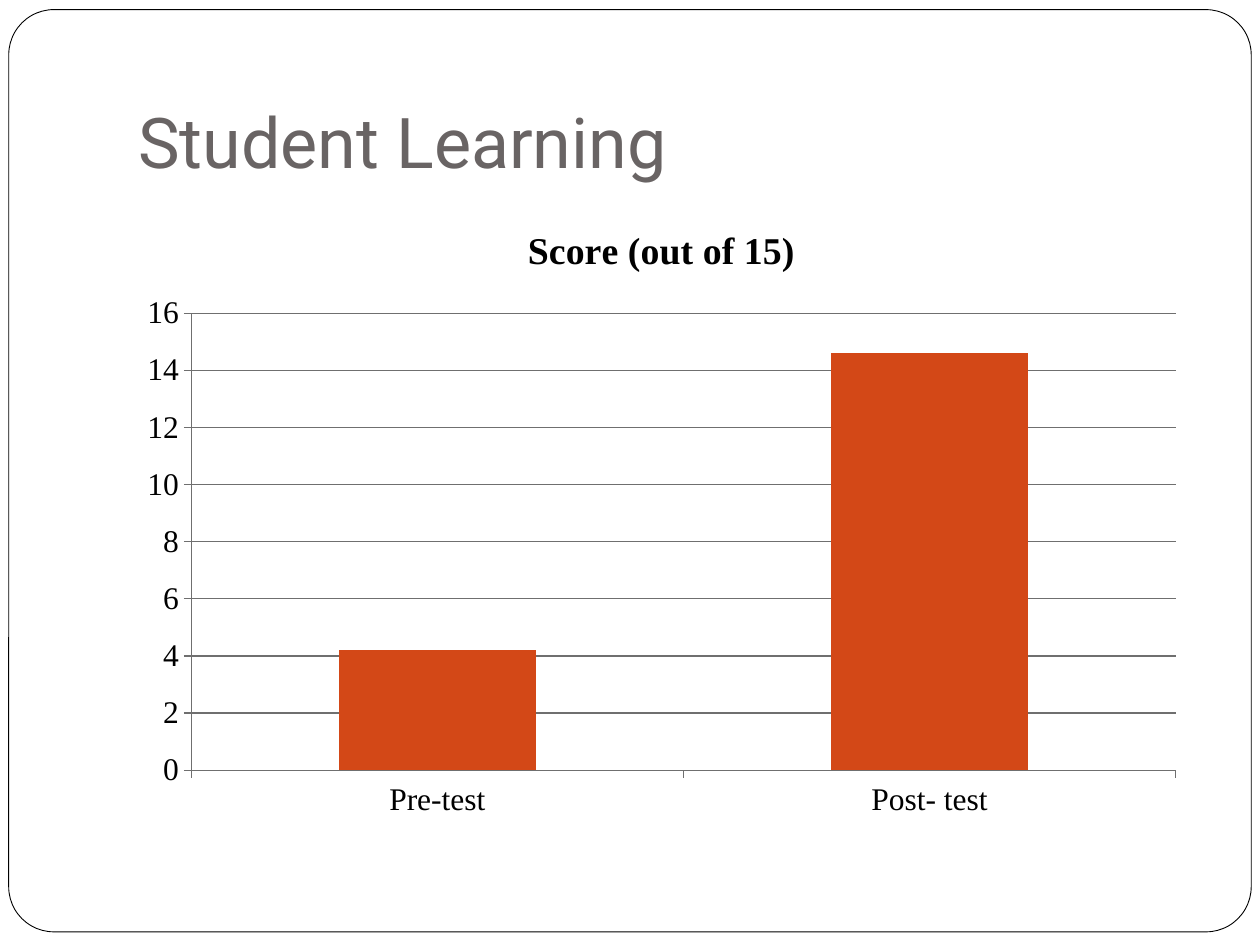
from dataclasses import dataclass

from pptx import Presentation
from pptx.chart.data import CategoryChartData
from pptx.dml.color import RGBColor
from pptx.enum.chart import XL_CHART_TYPE, XL_TICK_MARK
from pptx.enum.shapes import MSO_SHAPE
from pptx.enum.text import MSO_ANCHOR
from pptx.util import Pt

COLORS = {
    "paper": "FFFFFF",
    "ink": "000000",
    "title": "696464",
    "bar": "D34817",
    "axis": "6F6F6F",
}


@dataclass
class Box:
    left: float
    top: float
    width: float
    height: float

    def pts(self) -> tuple:
        return Pt(self.left), Pt(self.top), Pt(self.width), Pt(self.height)


@dataclass
class Score:
    test: str
    value: float


SCORES = [Score("Pre-test", 4.2), Score("Post- test", 14.6)]


def rgb(name: str) -> RGBColor:
    return RGBColor.from_string(COLORS[name])


def write(tf, text: str, *, size: float, font: str, color: str, bold: bool = False) -> None:
    r = tf.paragraphs[0].add_run()
    r.text = text
    r.font.size = Pt(size)
    r.font.name = font
    r.font.bold = bold
    r.font.color.rgb = rgb(color)


def add_frame(s, box: Box) -> None:
    sp = s.shapes.add_shape(MSO_SHAPE.ROUNDED_RECTANGLE, *box.pts())
    sp.adjustments[0] = 0.049
    sp.shadow.inherit = False
    sp.fill.solid()
    sp.fill.fore_color.rgb = rgb("paper")
    sp.line.color.rgb = rgb("ink")
    sp.line.width = Pt(0.5)


def add_title(s, box: Box, text: str) -> None:
    tf = s.shapes.add_textbox(*box.pts()).text_frame
    tf.word_wrap = True
    tf.vertical_anchor = MSO_ANCHOR.BOTTOM
    tf.margin_left = tf.margin_right = tf.margin_bottom = Pt(7.2)
    tf.margin_top = Pt(3.6)
    write(tf, text, size=40, font="Roboto", color="title")


def style_axis(axis) -> None:
    axis.major_tick_mark = XL_TICK_MARK.OUTSIDE
    axis.minor_tick_mark = XL_TICK_MARK.NONE
    axis.format.line.color.rgb = rgb("axis")
    axis.format.line.width = Pt(0.75)


def add_score_chart(s, box: Box, title: str, scores: list[Score]) -> None:
    data = CategoryChartData()
    data.categories = [score.test for score in scores]
    data.add_series(title, [score.value for score in scores])
    chart = s.shapes.add_chart(XL_CHART_TYPE.COLUMN_CLUSTERED, *box.pts(), data).chart
    chart.font.name = "Times New Roman"
    chart.font.size = Pt(18)
    chart.font.color.rgb = rgb("ink")
    chart.has_legend = False
    chart.has_title = True
    write(chart.chart_title.text_frame, title, size=21.6,
          font="Times New Roman", color="ink", bold=True)
    chart.chart_title.include_in_layout = False

    style_axis(chart.category_axis)
    axis = chart.value_axis
    style_axis(axis)
    axis.minimum_scale = 0
    axis.maximum_scale = 16
    axis.major_unit = 2
    axis.has_major_gridlines = True
    axis.major_gridlines.format.line.color.rgb = rgb("axis")
    axis.major_gridlines.format.line.width = Pt(0.75)

    plot = chart.plots[0]
    plot.vary_by_categories = False
    plot.gap_width = 150
    fill = plot.series[0].format.fill
    fill.solid()
    fill.fore_color.rgb = rgb("bar")


def main() -> None:
    prs = Presentation()
    prs.slide_width, prs.slide_height = Pt(720), Pt(540)
    s = prs.slides.add_slide(prs.slide_layouts[6])
    s.background.fill.solid()
    s.background.fill.fore_color.rgb = rgb("paper")
    add_frame(s, Box(5, 5.5, 710, 527))
    add_title(s, Box(72, 21.6, 612, 90), "Student Learning")
    add_score_chart(s, Box(72, 114, 612, 360), "Score (out of 15)", SCORES)
    prs.save("out.pptx")


if __name__ == "__main__":
    main()
